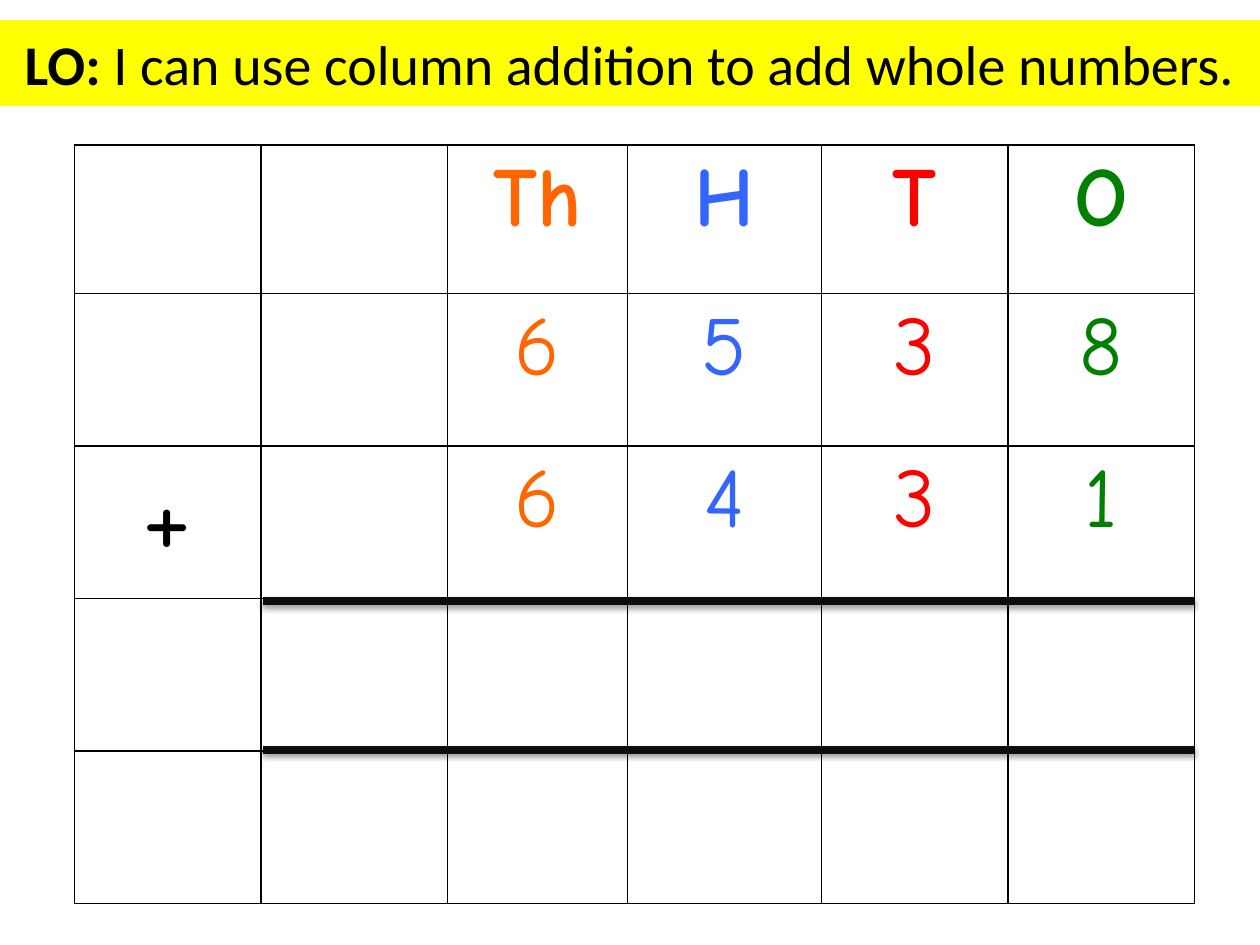
from lxml import etree
from pptx import Presentation, util as u
from pptx.dml.color import RGBColor
from pptx.enum import shapes, text
from pptx.oxml import parse_xml
from pptx.oxml.ns import nsdecls, qn

COLORS = {"ink": "000000", "paper": "FFFFFF", "banner": "FFFF00", "rule": "0D0D0D",
          "Th": "FF6600", "H": "3366FF", "T": "FF0000", "O": "008000"}
PLACES = ["", "", "Th", "H", "T", "O"]
ROWS = [PLACES, ["", "", "6", "5", "3", "8"], ["+", "", "6", "4", "3", "1"],
        [""] * 6, [""] * 6]
COL_W = [1.48, 1.48, 1.43, 1.54, 1.48, 1.48]
ROW_H = [1.18] + [1.21] * 4
LEFT, TOP = 0.59, 1.15


def rgb(name):
    return RGBColor.from_string(COLORS[name])


def add_run(p, words, font, size, color, bold=False):
    r = p.add_run()
    r.text = words
    r.font.name, r.font.size, r.font.bold = font, u.Pt(size), bold
    r.font.color.rgb = rgb(color)


def add_banner(s):
    sp = s.shapes.title
    sp.left, sp.top, sp.width, sp.height = map(u.Inches, (0, 0.16, 10, 0.68))
    sp.fill.solid()
    sp.fill.fore_color.rgb = rgb("banner")
    tf = sp.text_frame
    tf.auto_size = text.MSO_AUTO_SIZE.NONE
    tf.word_wrap = True
    tf.vertical_anchor = text.MSO_ANCHOR.MIDDLE
    p = tf.paragraphs[0]
    p.alignment = text.PP_ALIGN.CENTER
    add_run(p, "LO: ", "Calibri", 32, "ink", True)
    add_run(p, "I can use column addition to add whole numbers.", "Calibri", 32, "ink")


def set_borders(cell):
    pr = cell._tc.get_or_add_tcPr()
    for i, side in enumerate(("lnL", "lnR", "lnT", "lnB")):
        pr.insert(i, parse_xml(
            f'<a:{side} {nsdecls("a")} w="12700"><a:solidFill>'
            f'<a:srgbClr val="{COLORS["ink"]}"/></a:solidFill></a:{side}>'))


def add_grid(s):
    table = s.shapes.add_table(
        len(ROWS), len(COL_W), u.Inches(LEFT), u.Inches(TOP),
        u.Inches(sum(COL_W)), u.Inches(sum(ROW_H))).table
    table.first_row = table.horz_banding = False
    for col, width in zip(table.columns, COL_W):
        col.width = u.Inches(width)
    for i, (row, height) in enumerate(zip(table.rows, ROW_H)):
        row.height = u.Inches(height)
        for cell, place, words in zip(row.cells, PLACES, ROWS[i]):
            cell.fill.solid()
            cell.fill.fore_color.rgb = rgb("paper")
            set_borders(cell)
            if words:
                p = cell.text_frame.paragraphs[0]
                p.alignment = text.PP_ALIGN.CENTER
                add_run(p, words, "Comic Neue", 66 if words == "+" else 48,
                        place or "ink", i == 0)


def add_rule(s, y):
    ends = (LEFT + COL_W[0] + 0.02, y, LEFT + sum(COL_W), y)
    line = s.shapes.add_connector(shapes.MSO_CONNECTOR.STRAIGHT, *map(u.Inches, ends))
    line.line.color.rgb = rgb("rule")
    line.line.width = u.Pt(4.5)
    effects = etree.SubElement(line._element.spPr, qn("a:effectLst"))
    shadow = etree.SubElement(effects, qn("a:outerShdw"), blurRad=str(u.Pt(3.1)),
                              dist=str(u.Pt(1.6)), dir="5400000", rotWithShape="0")
    color = etree.SubElement(shadow, qn("a:srgbClr"), val=COLORS["ink"])
    etree.SubElement(color, qn("a:alpha"), val="38000")


def main():
    """Build the column addition slide."""
    prs = Presentation()
    prs.slide_width, prs.slide_height = u.Inches(10), u.Inches(7.5)
    s = prs.slides.add_slide(prs.slide_layouts[5])
    add_banner(s)
    add_grid(s)
    for y in (4.77, 5.95):
        add_rule(s, y)
    prs.save("out.pptx")


if __name__ == "__main__":
    main()
